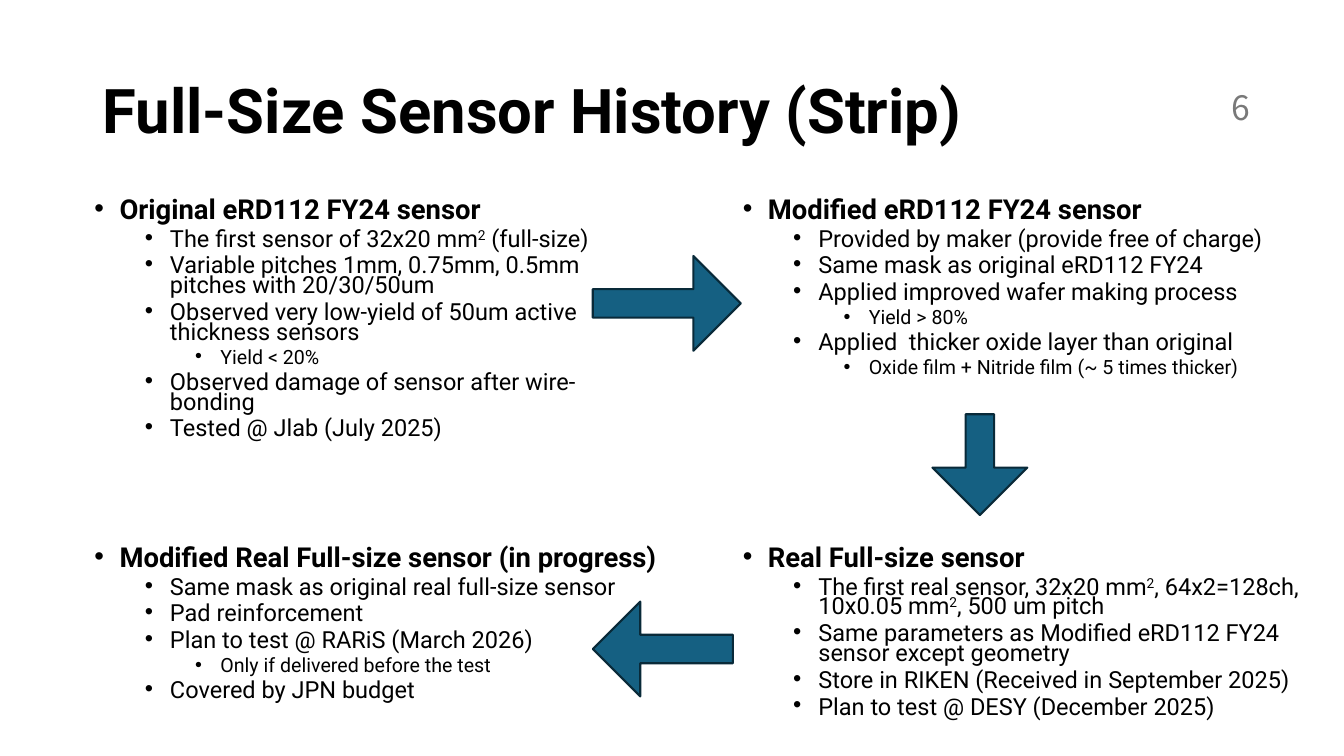
from lxml import etree
from pptx import Presentation
from pptx.dml.color import RGBColor
from pptx.enum.shapes import MSO_SHAPE
from pptx.enum.text import MSO_ANCHOR, PP_ALIGN
from pptx.oxml.ns import qn
from pptx.util import Cm, Pt

RIGHT_ARROW = MSO_SHAPE.RIGHT_ARROW
DOWN_ARROW = MSO_SHAPE.DOWN_ARROW
LEFT_ARROW = MSO_SHAPE.LEFT_ARROW
MIDDLE, TOP = MSO_ANCHOR.MIDDLE, MSO_ANCHOR.TOP
ALIGN_LEFT, ALIGN_RIGHT = PP_ALIGN.LEFT, PP_ALIGN.RIGHT

LEFT_COLUMN, RIGHT_COLUMN = 2.13, 18.47
UPPER_ROW, LOWER_ROW = 4.95, 13.72
LEVEL_SIZES = (19.6, 16.8, 14)
INDENT = 0.635

STAGES = [
    ((LEFT_COLUMN, UPPER_ROW, 13, 7.39), [
        (0, "Original eRD112 FY24 sensor"),
        (1, "The first sensor of 32x20 mm² (full-size)"),
        (1, "Variable pitches 1mm, 0.75mm, 0.5mm pitches with 20/30/50um"),
        (1, "Observed very low-yield of 50um active thickness sensors"),
        (2, "Yield < 20%"),
        (1, "Observed damage of sensor after wire-bonding"),
        (1, "Tested @ Jlab (July 2025)"),
    ]),
    ((RIGHT_COLUMN, UPPER_ROW, 13.94, 5.87), [
        (0, "Modified eRD112 FY24 sensor"),
        (1, "Provided by maker (provide free of charge)"),
        (1, "Same mask as original eRD112 FY24"),
        (1, "Applied improved wafer making process"),
        (2, "Yield > 80%"),
        (1, "Applied  thicker oxide layer than original"),
        (2, "Oxide film + Nitride film (~ 5 times thicker)"),
    ]),
    ((RIGHT_COLUMN, LOWER_ROW, 14.81, 4.65), [
        (0, "Real Full-size sensor"),
        (1, "The first real sensor, 32x20 mm², 64x2=128ch, 10x0.05 mm², 500 um pitch"),
        (1, "Same parameters as Modified eRD112 FY24 sensor except geometry"),
        (1, "Store in RIKEN (Received in September 2025)"),
        (1, "Plan to test @ DESY (December 2025)"),
    ]),
    ((LEFT_COLUMN, LOWER_ROW, 16.33, 4.65), [
        (0, "Modified Real Full-size sensor (in progress)"),
        (1, "Same mask as original real full-size sensor"),
        (1, "Pad reinforcement"),
        (1, "Plan to test @ RARiS (March 2026)"),
        (2, "Only if delivered before the test"),
        (1, "Covered by JPN budget"),
    ]),
]

STEPS = [
    (RIGHT_ARROW, (14.94, 6.45, 3.73, 2.39)),
    (DOWN_ARROW, (23.5, 10.44, 2.39, 2.54)),
    (LEFT_ARROW, (14.94, 15.16, 3.53, 2.39)),
]


def color(hex_code):
    """Return the colour for a hex string."""
    return RGBColor.from_string(hex_code)


def add_frame(slide, box, anchor):
    """Add a wrapping text box and return its text frame."""
    frame = slide.shapes.add_textbox(*map(Cm, box)).text_frame
    frame.word_wrap = True
    frame.vertical_anchor = anchor
    return frame


def style_font(paragraph, size, name="Roboto", hex_code="000000", bold=False):
    """Set the font of a whole paragraph."""
    font = paragraph.font
    font.size, font.name, font.bold = Pt(size), name, bold
    font.color.rgb = color(hex_code)


def add_label(slide, box, text, align, size, **font):
    """Add one vertically centred line of text."""
    paragraph = add_frame(slide, box, MIDDLE).paragraphs[0]
    paragraph.text = text
    paragraph.alignment = align
    paragraph.line_spacing = 0.9
    style_font(paragraph, size, **font)


def add_bullet(paragraph, level):
    """Give a paragraph a hanging bullet at its level."""
    properties = paragraph._p.get_or_add_pPr()
    properties.set("marL", str(Cm(INDENT * (2 * level + 1))))
    properties.set("indent", str(-Cm(INDENT)))
    etree.SubElement(properties, qn("a:buFont")).set("typeface", "Arial")
    etree.SubElement(properties, qn("a:buChar")).set("char", "•")


def add_superscript(paragraph, text):
    """Add a raised run."""
    run = paragraph.add_run()
    run.text = text
    run._r.get_or_add_rPr().set("baseline", "30000")


def add_stage(slide, box, lines):
    """Add one stage of the history: a bold heading and its bullets."""
    frame = add_frame(slide, box, TOP)
    for index, (level, text) in enumerate(lines):
        paragraph = frame.add_paragraph() if index else frame.paragraphs[0]
        paragraph.level = level
        add_bullet(paragraph, level)
        paragraph.line_spacing = 0.7
        paragraph.space_before = Pt(5 if index else 0)
        for part_index, part in enumerate(text.split("²")):
            if part_index:
                add_superscript(paragraph, "2")
            paragraph.add_run().text = part
        style_font(paragraph, LEVEL_SIZES[level], bold=level == 0)


def add_step(slide, direction, box):
    """Add a block arrow leading to the next stage."""
    arrow = slide.shapes.add_shape(direction, *map(Cm, box))
    arrow.shadow.inherit = False
    arrow.adjustments[0], arrow.adjustments[1] = 0.3, 0.5
    arrow.fill.solid()
    arrow.fill.fore_color.rgb = color("156082")
    arrow.line.color.rgb = color("092A39")
    arrow.line.width = Pt(1.5)


def main():
    """Build the sensor history slide."""
    presentation = Presentation()
    presentation.slide_width, presentation.slide_height = Cm(33.87), Cm(19.05)
    slide = presentation.slides.add_slide(presentation.slide_layouts[6])
    add_label(slide, (2.34, 1.02, 29.21, 3.68), "Full-Size Sensor History (Strip)",
              ALIGN_LEFT, 44, bold=True)
    add_label(slide, (29.03, 2.24, 2.72, 1.02), "6", ALIGN_RIGHT, 24,
              name="Noto Sans CJK JP", hex_code="797979")
    for box, lines in STAGES:
        add_stage(slide, box, lines)
    for direction, box in STEPS:
        add_step(slide, direction, box)
    presentation.save("out.pptx")


if __name__ == "__main__":
    main()
